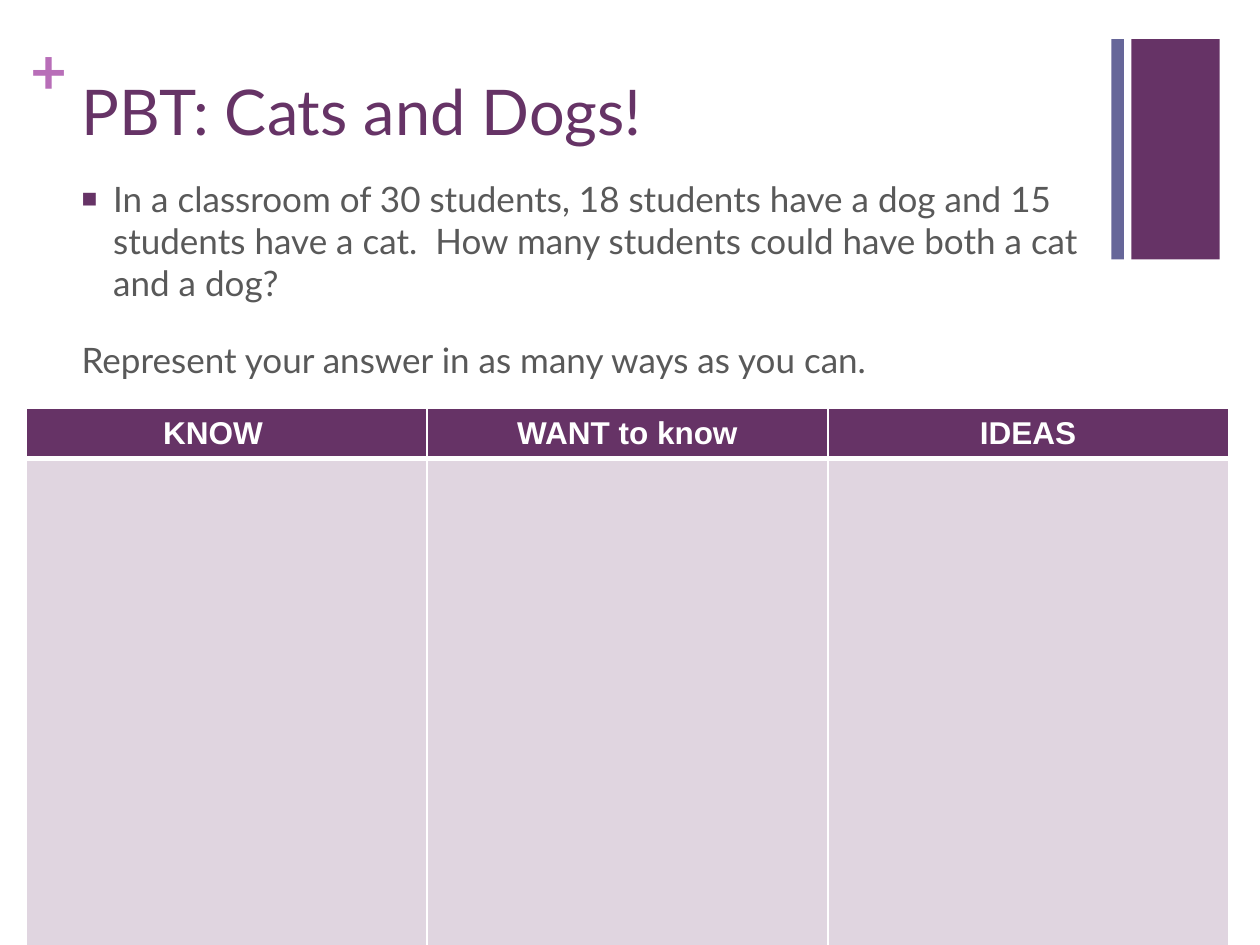
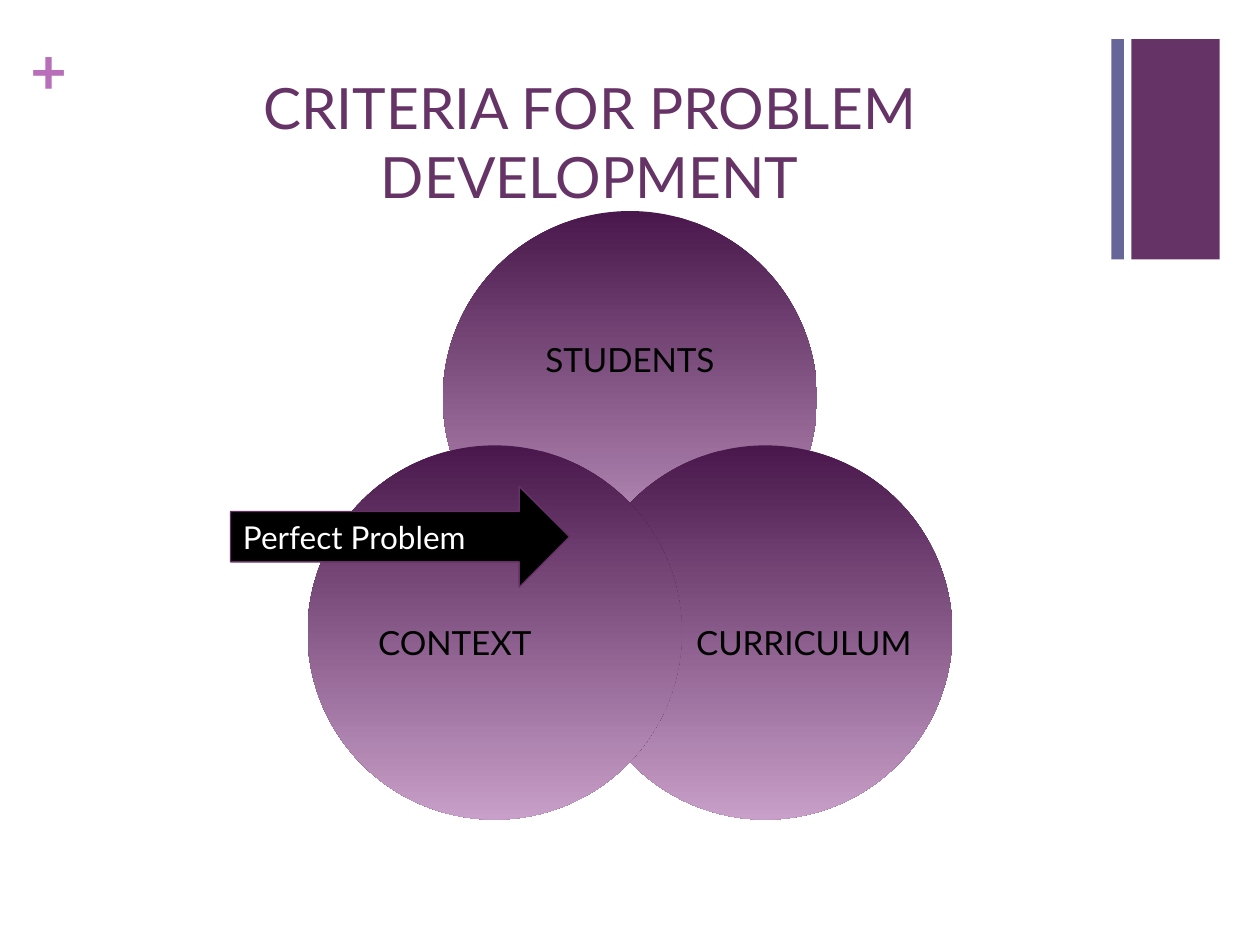
import math
from lxml import etree
from pptx import Presentation
from pptx.dml.color import RGBColor
from pptx.enum import shapes, text
from pptx.oxml import ns
from pptx.util import Inches, Pt

PLUM = RGBColor(0x66, 0x33, 0x66)
SLATE = RGBColor(0x66, 0x66, 0x99)
ORCHID = RGBColor(0xB8, 0x6E, 0xB8)
GREY = RGBColor(0x59, 0x59, 0x59)
PALE = RGBColor(0xE0, 0xD5, 0xE0)
DARK = RGBColor(0x49, 0x17, 0x4B)
LIGHT = RGBColor(0xC8, 0x9F, 0xC9)
EDGE = RGBColor(0x65, 0x30, 0x65)
BLACK = RGBColor(0, 0, 0)
WHITE = RGBColor(0xFF, 0xFF, 0xFF)
LEFT, CENTER = text.PP_ALIGN.LEFT, text.PP_ALIGN.CENTER
TOP, MIDDLE = text.MSO_ANCHOR.TOP, text.MSO_ANCHOR.MIDDLE
KIND = shapes.MSO_SHAPE


def write(frame, lines, size, color, align=LEFT, anchor=TOP, inset=True, bold=False):
    """Fill a text frame, one paragraph per line."""
    frame.word_wrap = True
    frame.vertical_anchor = anchor
    frame.margin_left = frame.margin_right = Inches(0.1 if inset else 0)
    frame.margin_top = frame.margin_bottom = Inches(0.05 if inset else 0)
    frame.text = "\n".join(lines)
    for par in frame.paragraphs:
        par.alignment = align
        par.font.name, par.font.size = "Lato", Pt(size)
        par.font.color.rgb, par.font.bold = color, bold


def draw(slide, kind, box, color=None):
    """Add a shape without shadow or outline."""
    shape = slide.shapes.add_shape(kind, *map(Inches, box))
    shape.shadow.inherit = False
    shape.line.fill.background()
    if color is not None:
        shape.fill.solid()
        shape.fill.fore_color.rgb = color
    return shape


deck = Presentation()
deck.slide_width, deck.slide_height = Inches(10), Inches(7.5)

# Shared bands, plus sign and titles
titles = [("PBT: Cats and Dogs!", 36, LEFT),
          ("CRITERIA FOR PROBLEM DEVELOPMENT", 32.5, CENTER)]
pages = []
for title, size, align in titles:
    page = deck.slides.add_slide(deck.slide_layouts[6])
    draw(page, KIND.RECTANGLE, (8.98, 0.31, 0.7, 1.75), PLUM)
    draw(page, KIND.RECTANGLE, (8.82, 0.31, 0.1, 1.75), SLATE)
    plus = page.shapes.add_textbox(*map(Inches, (0.24, 0.25, 0.29, 0.61)))
    write(plus.text_frame, ["+"], 36, ORCHID, inset=False, bold=True)
    head = page.shapes.add_textbox(*map(Inches, (0.55, 0.53, 8.26, 1.22)))
    write(head.text_frame, [title], size, PLUM, align)
    pages.append(page)
task, venn = pages

# Slide 1: the problem
body = task.shapes.add_textbox(*map(Inches, (0.55, 1.36, 8.26, 1.88))).text_frame
write(body, ["In a classroom of 30 students, 18 students have a dog and 15 students "
             "have a cat.  How many students could have both a cat and a dog?",
             "Represent your answer in as many ways as you can."], 20, GREY)
first, last = body.paragraphs
last.space_before = Pt(20)
props = first._p.get_or_add_pPr()
props.set("marL", str(Inches(0.25)))
props.set("indent", str(Inches(-0.25)))
tint = etree.SubElement(props, ns.qn("a:buClr"))
etree.SubElement(tint, ns.qn("a:srgbClr"), val=str(PLUM))
etree.SubElement(props, ns.qn("a:buSzPct"), val="75000")
etree.SubElement(props, ns.qn("a:buFont"), typeface="Arial")
etree.SubElement(props, ns.qn("a:buChar"), char="■")

# Slide 1: planning table
heads = ["KNOW", "WANT to know", "IDEAS"]
grid = task.shapes.add_table(2, 3, *map(Inches, (0.21, 3.24, 9.54, 6.03))).table
grid.rows[0].height, grid.rows[1].height = Inches(0.4), Inches(5.63)
for col, label in enumerate(heads):
    grid.columns[col].width = Inches(3.18)
    for row in range(2):
        cell = grid.cell(row, col)
        cell.fill.solid()
        cell.fill.fore_color.rgb = PALE if row else PLUM
        props = cell._tc.get_or_add_tcPr()
        for spot, side in enumerate(("lnL", "lnR", "lnT", "lnB")):
            # The rule between the two rows is thicker
            thick = (row, side) in ((0, "lnB"), (1, "lnT"))
            edge = etree.Element(ns.qn("a:" + side), w=str(Pt(3 if thick else 1)))
            fill = etree.SubElement(edge, ns.qn("a:solidFill"))
            etree.SubElement(fill, ns.qn("a:srgbClr"), val=str(WHITE))
            props.insert(spot, edge)
    cell = grid.cell(0, col)
    cell.text = label
    cell.vertical_anchor = MIDDLE
    par = cell.text_frame.paragraphs[0]
    par.alignment = CENTER
    par.font.name, par.font.size = "Arial", Pt(18)
    par.font.bold, par.font.color.rgb = True, WHITE
grid.cell(0, 0).margin_right = Inches(0.32)

# Slide 2: three circles spaced evenly around a centre
SIZE, REACH, MID = 2.97, 1.24, (5, 4.4)
rings = [("STUDENTS", -90, (3.91, 2.2, 2.18, 1.34)),
         ("CURRICULUM", 30, (5.49, 4.3, 1.78, 1.63)),
         ("CONTEXT", 150, (2.72, 4.3, 1.78, 1.63))]
for label, angle, box in rings:
    turn = math.radians(angle)
    left = MID[0] + REACH * math.cos(turn) - SIZE / 2
    top = MID[1] + REACH * math.sin(turn) - SIZE / 2
    ring = draw(venn, KIND.OVAL, (left, top, SIZE, SIZE))
    ring.fill.gradient()
    ring.fill.gradient_angle = 270
    for stop, place, color in zip(ring.fill.gradient_stops, (0, 1), (DARK, LIGHT)):
        stop.position, stop.color.rgb = place, color
    name = venn.shapes.add_textbox(*map(Inches, box)).text_frame
    write(name, [label], 19, BLACK, CENTER, MIDDLE, inset=False)
    name.paragraphs[0].line_spacing = 0.9
    name.paragraphs[0].space_after = Pt(6.7)

# Slide 2: arrow to the overlap
arrow = draw(venn, KIND.RIGHT_ARROW, (1.83, 3.86, 2.69, 0.8), BLACK)
arrow.line.color.rgb, arrow.line.width = EDGE, Pt(0.75)
write(arrow.text_frame, ["Perfect Problem"], 18, WHITE, anchor=MIDDLE)

deck.save("out.pptx")
